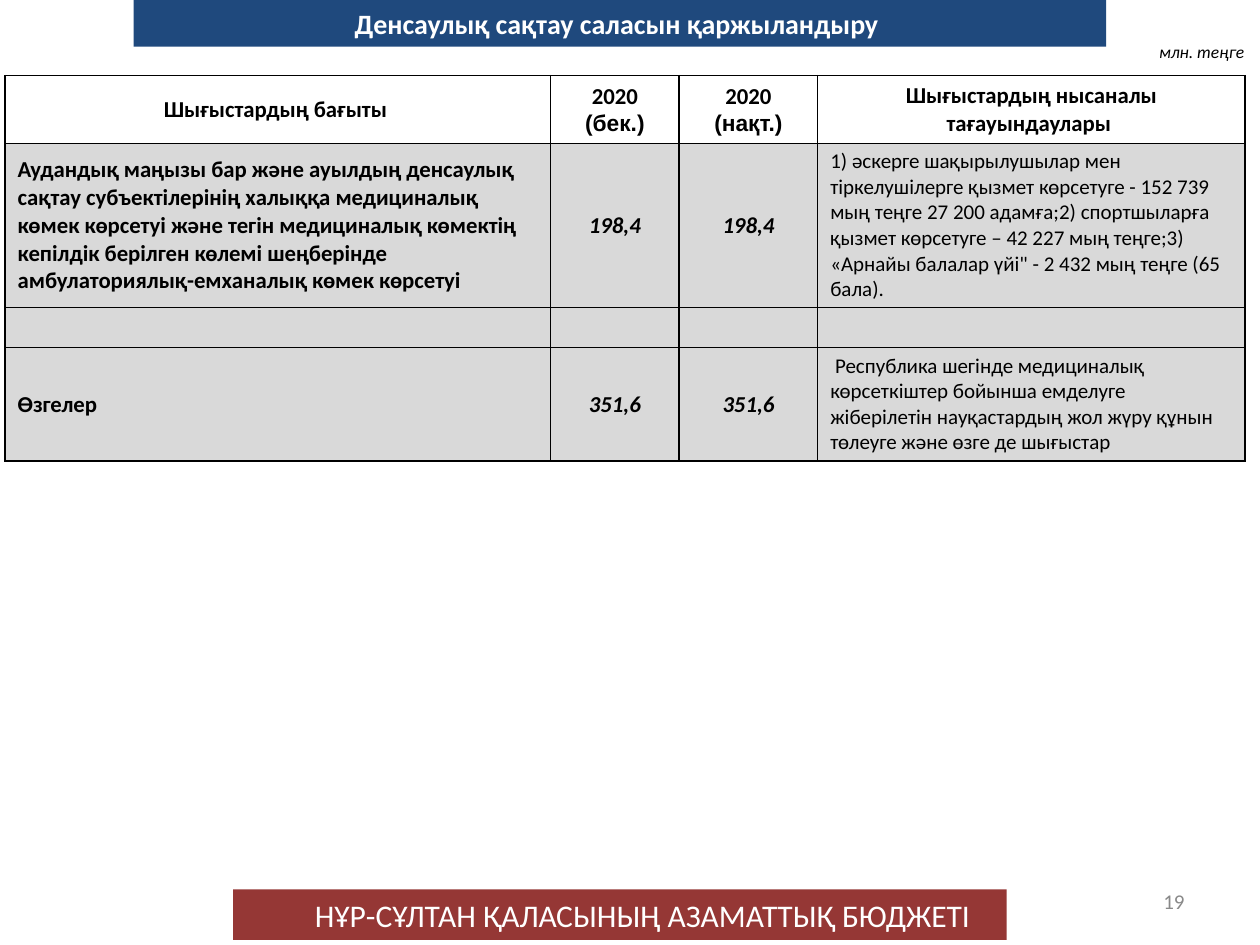
from lxml import etree
from pptx import Presentation
from pptx.dml.color import RGBColor
from pptx.enum.shapes import MSO_SHAPE
from pptx.enum.text import MSO_ANCHOR, MSO_AUTO_SIZE, PP_ALIGN
from pptx.oxml.ns import qn
from pptx.util import Inches, Pt

BLACK = RGBColor(0x00, 0x00, 0x00)
WHITE = RGBColor(0xFF, 0xFF, 0xFF)
NAVY = RGBColor(0x1F, 0x49, 0x7D)
MAROON = RGBColor(0x95, 0x37, 0x35)
LIGHT_GRAY = RGBColor(0xD9, 0xD9, 0xD9)
NUMBER_GRAY = RGBColor(0x89, 0x89, 0x89)
LEFT, CENTER, RIGHT, JUSTIFY = PP_ALIGN.LEFT, PP_ALIGN.CENTER, PP_ALIGN.RIGHT, PP_ALIGN.JUSTIFY
TOP, MIDDLE = MSO_ANCHOR.TOP, MSO_ANCHOR.MIDDLE
NO_AUTOFIT = MSO_AUTO_SIZE.NONE
RECTANGLE = MSO_SHAPE.RECTANGLE

COLUMN_WIDTHS = (4.33, 1.02, 1.1, 3.39)
ROW_HEIGHTS = (0.54, 1.3, 0.32, 0.9)
HEADERS = (
    (("Шығыстардың бағыты ", "Calibri"),),
    (("2020 ", "Calibri"), ("(бек.)", "Arial")),
    (("2020 ", "Calibri"), ("(нақт.)", "Arial")),
    (("Шығыстардың нысаналы тағауындаулары ", "Calibri"),),
)
EXPENSES = (
    (
        "Аудандық маңызы бар және ауылдың денсаулық сақтау субъектілерінің халыққа "
        "медициналық көмек көрсетуі және тегін медициналық көмектің кепілдік берілген "
        "көлемі шеңберінде амбулаториялық-емханалық көмек көрсетуі",
        "198,4",
        "198,4",
        "1) әскерге шақырылушылар мен тіркелушілерге қызмет көрсетуге - 152 739 мың теңге "
        "27 200 адамға;2) спортшыларға қызмет көрсетуге – 42 227 мың теңге;3) "
        "«Арнайы балалар үйі\" - 2 432 мың теңге (65 бала).",
    ),
    ("", "", "", ""),
    (
        "Өзгелер",
        "351,6",
        "351,6",
        " Республика шегінде медициналық көрсеткіштер бойынша емделуге жіберілетін "
        "науқастардың жол жүру құнын төлеуге және өзге де шығыстар",
    ),
)
COLUMN_STYLES = (
    {"size": 13, "bold": True},
    {"size": 13, "bold": True, "italic": True, "alignment": CENTER},
    {"size": 13, "bold": True, "italic": True, "alignment": CENTER},
    {"size": 12},
)


def add_run(paragraph, text, size, color=BLACK, font="Calibri", bold=False, italic=False, alignment=LEFT):
    paragraph.alignment = alignment
    run = paragraph.add_run()
    run.text = text
    run.font.name = font
    run.font.size = Pt(size)
    run.font.color.rgb = color
    run.font.bold = bold
    run.font.italic = italic


def place(shape, left, top, width, height):
    shape.left, shape.top = Inches(left), Inches(top)
    shape.width, shape.height = Inches(width), Inches(height)


def fill_solid(target, color):
    target.fill.solid()
    target.fill.fore_color.rgb = color


def format_title(slide, text):
    title = slide.shapes.title
    place(title, 1.06, 0, 7.72, 0.37)
    fill_solid(title, NAVY)
    title.text_frame.auto_size = NO_AUTOFIT
    title.text_frame.vertical_anchor = TOP
    add_run(title.text_frame.paragraphs[0], text, 16, WHITE, bold=True, alignment=CENTER)


def add_label(slide, bounds, text, size, anchor=TOP, **style):
    label = slide.shapes.add_textbox(*map(Inches, bounds))
    label.text_frame.word_wrap = True
    label.text_frame.vertical_anchor = anchor
    add_run(label.text_frame.paragraphs[0], text, size, **style)


def add_band(slide, bounds, color):
    band = slide.shapes.add_shape(RECTANGLE, *map(Inches, bounds))
    band.shadow.inherit = False
    fill_solid(band, color)
    band.line.fill.background()


def add_cell_borders(cell):
    properties = cell._tc.get_or_add_tcPr()
    for position, side in enumerate(("a:lnL", "a:lnR", "a:lnT", "a:lnB")):
        border = etree.Element(qn(side), w=str(Pt(1)))
        fill = etree.SubElement(border, qn("a:solidFill"))
        etree.SubElement(fill, qn("a:srgbClr"), val=str(BLACK))
        properties.insert(position, border)


def format_cell(cell, color):
    cell.vertical_anchor = MIDDLE
    cell.margin_top = cell.margin_bottom = Inches(0.04)
    fill_solid(cell, color)
    add_cell_borders(cell)


def add_expense_table(slide):
    bounds = (0.04, 0.6, sum(COLUMN_WIDTHS), sum(ROW_HEIGHTS))
    frame = slide.shapes.add_table(len(ROW_HEIGHTS), len(COLUMN_WIDTHS), *map(Inches, bounds))
    table = frame.table
    for column, width in zip(table.columns, COLUMN_WIDTHS):
        column.width = Inches(width)
    for row, height in zip(table.rows, ROW_HEIGHTS):
        row.height = Inches(height)
    for cell, runs in zip(table.rows[0].cells, HEADERS):
        format_cell(cell, WHITE)
        for text, font in runs:
            add_run(cell.text_frame.paragraphs[0], text, 13, font=font, bold=True, alignment=CENTER)
    for row_index, expense in enumerate(EXPENSES, start=1):
        for cell, text, style in zip(table.rows[row_index].cells, expense, COLUMN_STYLES):
            format_cell(cell, LIGHT_GRAY)
            paragraph = cell.text_frame.paragraphs[0]
            if text:
                add_run(paragraph, text, **style)
            else:
                etree.SubElement(paragraph._p, qn("a:endParaRPr"), sz="1300")


def main():
    presentation = Presentation()
    presentation.slide_width, presentation.slide_height = Inches(10), Inches(7.5)
    slide = presentation.slides.add_slide(presentation.slide_layouts[5])
    add_expense_table(slide)
    format_title(slide, "Денсаулық сақтау саласын қаржыландыру ")
    add_label(slide, (9.1, 0.28, 1.09, 0.27), "млн. теңге", 10, italic=True)
    add_band(slide, (1.85, 7.06, 6.14, 0.4), MAROON)
    add_label(slide, (2.4, 7.06, 6.06, 0.4), "НҰР-СҰЛТАН ҚАЛАСЫНЫҢ АЗАМАТТЫҚ БЮДЖЕТІ ", 18,
              color=WHITE, alignment=JUSTIFY)
    add_label(slide, (7.17, 6.95, 2.33, 0.4), "19", 12, MIDDLE, color=NUMBER_GRAY, alignment=RIGHT)
    presentation.save("out.pptx")


if __name__ == "__main__":
    main()
